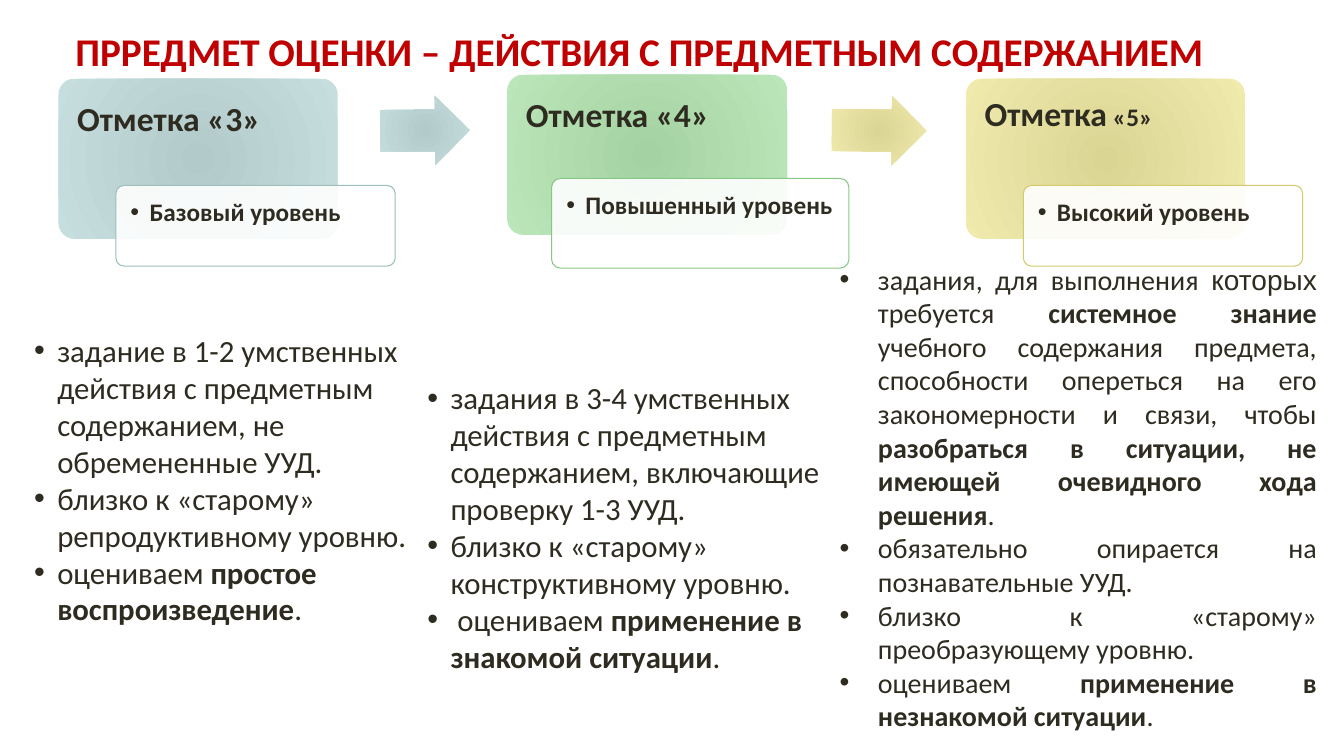
from dataclasses import dataclass

from lxml.etree import SubElement
from pptx import Presentation
from pptx.dml.color import RGBColor
from pptx.enum.shapes import MSO_SHAPE
from pptx.enum.text import MSO_ANCHOR, MSO_AUTO_SIZE, PP_ALIGN
from pptx.oxml import parse_xml
from pptx.oxml.ns import nsdecls, qn
from pptx.util import Pt

SCALE = 9144  # EMU in one px, 100 px to the inch


@dataclass(frozen=True)
class Theme:
    font: str = "Calibri"
    ink: str = "2E2B21"
    red: str = "C00000"
    white: str = "FFFFFF"
    # Each level: gradient centre, gradient rim, outline
    teal: tuple = ("B2CBCA", "C6DEDE", "9CBEBD")
    green: tuple = ("A5D2A3", "BBE6B9", "88C785")
    gold: tuple = ("DBD594", "F0EAAD", "D2CB6C")
    title: int = 28
    head: int = 24
    body: int = 22
    small: int = 20
    label: int = 18


THEME = Theme()
BOLD = {"bold": True}


def px(*nums):
    return [n * SCALE for n in nums]


def apply(obj, vals):
    for key, val in vals.items():
        setattr(obj, key, val)


# Text
def add_runs(para, runs, size, color=THEME.ink, **extra):
    """Each run is a string or a pair of string and format values."""
    for item in runs:
        text, vals = (item, {}) if isinstance(item, str) else item
        run = para.add_run()
        run.text = text
        base = {"name": THEME.font, "size": Pt(size)}
        apply(run.font, base | extra | vals)
        run.font.color.rgb = RGBColor.from_string(color)


def add_bullet(para, indent):
    props = para._p.get_or_add_pPr()
    props.set("marL", str(indent * SCALE))
    props.set("indent", str(-indent * SCALE))
    SubElement(props, qn("a:buFont")).set("typeface", "Arial")
    SubElement(props, qn("a:buChar")).set("char", "•")


def set_frame(frame, inset):
    vals = {"word_wrap": True, "vertical_anchor": MSO_ANCHOR.TOP}
    for side in ("left", "top", "right"):
        vals["margin_" + side] = inset * SCALE
    apply(frame, vals)


def add_box(slide, box, wrap=True):
    frame = slide.shapes.add_textbox(*px(*box)).text_frame
    apply(frame, {"word_wrap": wrap,
                  "auto_size": MSO_AUTO_SIZE.SHAPE_TO_FIT_TEXT})
    return frame


def add_list(slide, box, items, size, indent, align):
    frame = add_box(slide, box)
    for num, runs in enumerate(items):
        para = frame.add_paragraph() if num else frame.paragraphs[0]
        para.alignment = align
        add_bullet(para, indent)
        add_runs(para, runs, size)


# Shapes
def add_form(slide, kind, box, *adjust):
    shape = slide.shapes.add_shape(kind, *px(*box))
    shape.shadow.inherit = False
    for num, val in enumerate(adjust):
        shape.adjustments[num] = val
    return shape


def fill_glow(shape, tone):
    shape.line.fill.background()
    stops = "".join(
        f'<a:gs pos="{pos}"><a:srgbClr val="{color}"/></a:gs>'
        for pos, color in zip((0, 100000), tone))
    sides = " ".join(f'{side}="100000"' for side in "ltrb")
    glow = parse_xml(
        f'<a:gradFill {nsdecls("a")} rotWithShape="1"><a:gsLst>{stops}</a:gsLst>'
        f'<a:path path="circle"><a:fillToRect {sides}/></a:path></a:gradFill>')
    shape._element.spPr.find(qn("a:prstGeom")).addnext(glow)


def add_card(slide, box, tone, runs, space):
    card = add_form(slide, MSO_SHAPE.ROUNDED_RECTANGLE, box, 0.1)
    fill_glow(card, tone)
    set_frame(card.text_frame, 14)
    para = card.text_frame.paragraphs[0]
    apply(para, {"alignment": PP_ALIGN.LEFT, "line_spacing": space})
    add_runs(para, runs, THEME.head, bold=True)


def add_label(slide, box, tone, text):
    label = add_form(slide, MSO_SHAPE.ROUNDED_RECTANGLE, box, 0.1)
    label.fill.solid()
    label.fill.fore_color.rgb = RGBColor.from_string(THEME.white)
    color = label._element.spPr.find(qn("a:solidFill"))[0]
    SubElement(color, qn("a:alpha")).set("val", "90000")
    label.line.color.rgb = RGBColor.from_string(tone[2])
    label.line.width = Pt(0.75)
    set_frame(label.text_frame, 12)
    para = label.text_frame.paragraphs[0]
    apply(para, {"alignment": PP_ALIGN.LEFT, "line_spacing": 0.9})
    add_bullet(para, 19)
    add_runs(para, [text], THEME.label, bold=True)


def add_arrow(slide, box, tone, turn):
    arrow = add_form(slide, MSO_SHAPE.RIGHT_ARROW, box, 0.6, 0.5)
    arrow.rotation = turn
    fill_glow(arrow, tone)


# Content
LEVELS = [
    ((58, 78, 277, 159), (115, 184, 277, 80), THEME.teal,
     ["Отметка «3»"], 1.0, "Базовый уровень"),
    ((503, 74, 278, 159), (547, 177, 295, 89), THEME.green,
     ["Отметка «4»"], 1.0, "Повышенный уровень"),
    ((958, 78, 277, 159), (1015, 184, 277, 80), THEME.gold,
     ["Отметка", (" «5»", {"size": Pt(THEME.label)})], 0.9,
     "Высокий уровень"),
]
ARROWS = [
    ((377, 95, 89, 69), THEME.teal, 359.5),
    ((825, 95, 94, 69), THEME.gold, 0.5),
]
BASIC = [
    ["задание в 1-2 умственных действия с предметным содержанием, "
     "не обремененные УУД."],
    ["близко к «старому» репродуктивному уровню."],
    ["оцениваем ", ("простое воспроизведение", BOLD), "."],
]
RAISED = [
    ["задания в 3-4 умственных действия с предметным содержанием, "
     "включающие проверку 1-3 УУД."],
    ["близко к «старому» конструктивному уровню."],
    [" оцениваем ", ("применение в знакомой ситуации", BOLD), "."],
]
HIGH = [
    ["задания, для выполнения ", ("которых", {"name": "Arial"}),
     " требуется ", ("системное знание", BOLD),
     " учебного содержания предмета, способности опереться на его "
     "закономерности и связи, чтобы ",
     ("разобраться в ситуации, не имеющей очевидного хода решения", BOLD),
     "."],
    ["обязательно опирается на познавательные УУД."],
    ["близко к «старому» преобразующему уровню."],
    ["оцениваем ", ("применение в незнакомой ситуации", BOLD), "."],
]
LISTS = [
    ((24, 324, 390, 343), BASIC, THEME.body, 23, PP_ALIGN.LEFT),
    ((414, 371, 440, 306), RAISED, THEME.body, 23, PP_ALIGN.LEFT),
    ((823, 255, 493, 481), HIGH, THEME.small, 38, PP_ALIGN.JUSTIFY),
]


def main():
    deck = Presentation()
    apply(deck, {"slide_width": 1333 * SCALE, "slide_height": 750 * SCALE})
    slide = deck.slides.add_slide(deck.slide_layouts[6])

    # Levels and the arrows between them
    for card, label, tone, runs, space, text in LEVELS:
        add_card(slide, card, tone, runs, space)
        add_label(slide, label, tone, text)
    for arrow in ARROWS:
        add_arrow(slide, *arrow)

    # Explanations under the levels
    for row in LISTS:
        add_list(slide, *row)

    # Title
    frame = add_box(slide, (65, 22, 1151, 57), wrap=False)
    add_runs(frame.paragraphs[0],
             ["ПРРЕДМЕТ ОЦЕНКИ – ДЕЙСТВИЯ С ПРЕДМЕТНЫМ СОДЕРЖАНИЕМ"],
             THEME.title, THEME.red, bold=True)
    deck.save("out.pptx")


if __name__ == "__main__":
    main()
